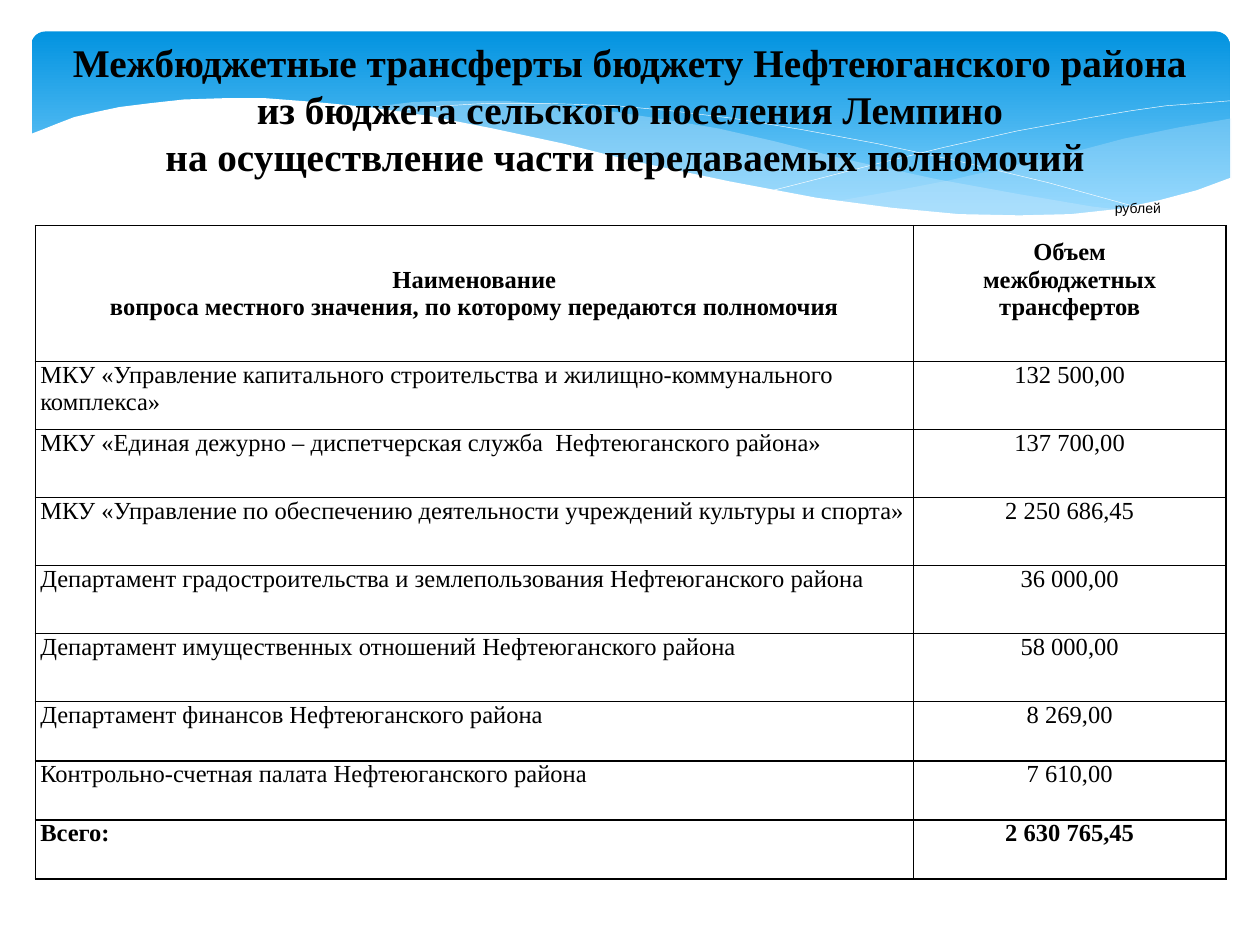
from lxml.etree import SubElement
from pptx import Presentation
from pptx.dml.color import RGBColor
from pptx.enum.shapes import MSO_SHAPE
from pptx.enum.text import MSO_ANCHOR, PP_ALIGN
from pptx.oxml.ns import qn
from pptx.util import Inches, Pt

BLACK, WHITE, PALE_BLUE = "000000", "FFFFFF", "C6E7FC"

TITLE = ("Межбюджетные трансферты бюджету Нефтеюганского района\v"
         "из бюджета сельского поселения Лемпино\v"
         "на осуществление части передаваемых полномочий ")
HEADER = ("Наименование\nвопроса местного значения, по которому передаются полномочия",
          "Объем\nмежбюджетных\nтрансфертов")
TRANSFERS = [
    ("МКУ «Управление капитального строительства и жилищно-коммунального комплекса»", "132 500,00"),
    ("МКУ «Единая дежурно – диспетчерская служба  Нефтеюганского района»", "137 700,00"),
    ("МКУ «Управление по обеспечению деятельности учреждений культуры и спорта»", "2 250 686,45"),
    ("Департамент градостроительства и землепользования Нефтеюганского района", "36 000,00"),
    ("Департамент имущественных отношений Нефтеюганского района", "58 000,00"),
    ("Департамент финансов Нефтеюганского района", "8 269,00"),
    ("Контрольно-счетная палата Нефтеюганского района", "7 610,00"),
]
TOTAL = ("Всего:", "2 630 765,45")
COLUMN_WIDTHS = [6.97, 2.48]
ROW_HEIGHTS = [1.08] + [0.54] * 5 + [0.47] * 3

RIGHT_WAVE = [
    (9.77, 0.94), (9.36, 1.01), (8.92, 1.1), (8.62, 1.18), (8.06, 1.31), (7.54, 1.43),
    (7.07, 1.52), (6.62, 1.6), (7.06, 1.66), (7.46, 1.69), (7.82, 1.72), (8.15, 1.72),
    (8.45, 1.71), (8.73, 1.69), (8.98, 1.65), (9.22, 1.6), (9.51, 1.52), (9.77, 1.42)]
MIDDLE_WAVE = [
    (8.94, 1.67), (8.67, 1.64), (8.08, 1.54), (7.42, 1.42), (6.69, 1.26), (6.14, 1.12),
    (5.7, 1.02), (5.28, 0.95), (4.89, 0.89), (4.42, 0.83), (4, 0.8), (3.62, 0.8),
    (3.28, 0.81), (2.87, 0.86), (3.23, 0.9), (3.63, 0.97), (4.05, 1.06), (4.5, 1.16),
    (5.3, 1.35), (5.85, 1.46), (6.35, 1.56), (6.81, 1.63), (7.23, 1.68), (7.62, 1.71),
    (7.97, 1.73), (8.29, 1.73), (8.59, 1.71)]
FALLING_CURVE = [
    (3.1, 0.9), (3.29, 0.86), (3.53, 0.84), (3.88, 0.82), (4.33, 0.82), (4.89, 0.84),
    (5.33, 0.88), (5.82, 0.94), (6.37, 1.03), (6.96, 1.14), (7.61, 1.28), (8.32, 1.45),
    (9.08, 1.66)]
RISING_CURVE = [
    (6.14, 1.51), (6.53, 1.41), (6.96, 1.3), (7.49, 1.17), (8.07, 1.04), (8.67, 0.93),
    (8.97, 0.88), (9.25, 0.84), (9.52, 0.82), (9.76, 0.8)]
WHITE_WAVE = [
    (9.77, 1.41), (9.5, 1.51), (9.2, 1.59), (8.87, 1.66), (8.5, 1.7), (8.09, 1.71),
    (7.61, 1.7), (7.08, 1.65), (6.48, 1.57), (5.79, 1.44), (5.03, 1.28), (4.47, 1.14),
    (3.91, 1.02), (3.4, 0.92), (2.92, 0.85), (2.5, 0.81), (2.11, 0.78), (1.77, 0.78),
    (1.46, 0.79), (1.19, 0.82), (0.95, 0.85), (0.76, 0.89), (0.59, 0.93), (0.46, 0.98),
    (0.36, 1.02), (0.23, 1.07), (0.23, 2.24), (9.77, 2.24)]


def color(value):
    return RGBColor.from_string(value)


def set_format(target, values):
    for name, value in values.items():
        setattr(target, name, value)


class SlideBuilder:
    def __init__(self, slide, font="Times New Roman"):
        self.slide = slide
        self.font = font

    def paragraphs(self, frame, text, size, align=PP_ALIGN.LEFT, bold=False, font=None):
        for index, line in enumerate(text.split("\n")):
            paragraph = frame.paragraphs[0] if index == 0 else frame.add_paragraph()
            paragraph.text = line
            paragraph.alignment = align
            for run in paragraph.runs:
                set_format(run.font, {"name": font or self.font, "size": Pt(size), "bold": bold})
                run.font.color.rgb = color(BLACK)

    def banner(self, left, top, width, height):
        shape = self.slide.shapes.add_shape(
            MSO_SHAPE.ROUNDED_RECTANGLE, *map(Inches, (left, top, width, height)))
        shape.adjustments[0] = 0.07
        shape.shadow.inherit = False
        shape.line.fill.background()
        shape.fill.gradient()
        shape.fill.gradient_angle = 270
        for stop, position, shade in zip(shape.fill.gradient_stops, (0, 0.9), ("0293E0", "83D3FE")):
            stop.position = position
            stop.color.rgb = color(shade)

    def outline(self, points, closed):
        start, *rest = [(Inches(x), Inches(y)) for x, y in points]
        builder = self.slide.shapes.build_freeform(*start, scale=1.0)
        builder.add_line_segments(rest, close=closed)
        shape = builder.convert_to_shape()
        shape.shadow.inherit = False
        return shape

    def wave(self, points, fill, opacity=100):
        shape = self.outline(points, closed=True)
        shape.line.fill.background()
        shape.fill.solid()
        shape.fill.fore_color.rgb = color(fill)
        if opacity < 100:
            rgb = shape.element.find(f".//{qn('a:srgbClr')}")
            SubElement(rgb, qn("a:alpha"), val=str(opacity * 1000))

    def curve(self, points):
        shape = self.outline(points, closed=False)
        shape.fill.background()
        shape.line.color.rgb = color(WHITE)
        shape.line.width = Pt(0.25)

    def text(self, left, top, width, height, text, size, anchor, **style):
        box = self.slide.shapes.add_textbox(*map(Inches, (left, top, width, height)))
        set_format(box.text_frame, {"word_wrap": True, "vertical_anchor": anchor})
        self.paragraphs(box.text_frame, text, size, **style)

    def border(self, cell):
        properties = cell._tc.get_or_add_tcPr()
        for index, side in enumerate(("lnL", "lnR", "lnT", "lnB")):
            line = properties.makeelement(qn(f"a:{side}"), {"w": str(Pt(1))})
            fill = SubElement(line, qn("a:solidFill"))
            SubElement(fill, qn("a:srgbClr"), val=BLACK)
            properties.insert(index, line)

    def table(self, left, top, rows, widths, heights):
        """Draw rows whose first is the header and last is the total."""
        table = self.slide.shapes.add_table(
            len(rows), len(widths),
            *map(Inches, (left, top, sum(widths), sum(heights)))).table
        for column, width in zip(table.columns, widths):
            column.width = Inches(width)
        for row, height in zip(table.rows, heights):
            row.height = Inches(height)
        for r, texts in enumerate(rows):
            header = r == 0
            for c, text in enumerate(texts):
                cell = table.cell(r, c)
                set_format(cell, {
                    "margin_left": Inches(0.04), "margin_right": Inches(0.04),
                    "margin_top": 0, "margin_bottom": Inches(0.22 if header and c else 0),
                    "vertical_anchor": MSO_ANCHOR.MIDDLE if header else MSO_ANCHOR.TOP})
                cell.fill.background()
                self.border(cell)
                self.paragraphs(cell.text_frame, text, 14, bold=header or r == len(rows) - 1,
                                align=PP_ALIGN.CENTER if header or c else PP_ALIGN.LEFT)


def main():
    presentation = Presentation()
    set_format(presentation, {"slide_width": Inches(10), "slide_height": Inches(7.5)})
    builder = SlideBuilder(presentation.slides.add_slide(presentation.slide_layouts[6]))

    builder.banner(0.25, 0.25, 9.51, 1.56)
    builder.wave(RIGHT_WAVE, PALE_BLUE, 29)
    builder.wave(MIDDLE_WAVE, PALE_BLUE, 40)
    builder.curve(FALLING_CURVE)
    builder.curve(RISING_CURVE)
    builder.wave(WHITE_WAVE, WHITE)
    builder.text(0.2, 0.6, 9.61, 0.87, TITLE, 22.4, MSO_ANCHOR.BOTTOM,
                 align=PP_ALIGN.CENTER, bold=True)
    builder.table(0.28, 1.79, [HEADER, *TRANSFERS, TOTAL], COLUMN_WIDTHS, ROW_HEIGHTS)
    builder.text(8.75, 1.49, 0.97, 0.32, "рублей", 8, MSO_ANCHOR.MIDDLE, font="Arial")
    presentation.save("out.pptx")


if __name__ == "__main__":
    main()
